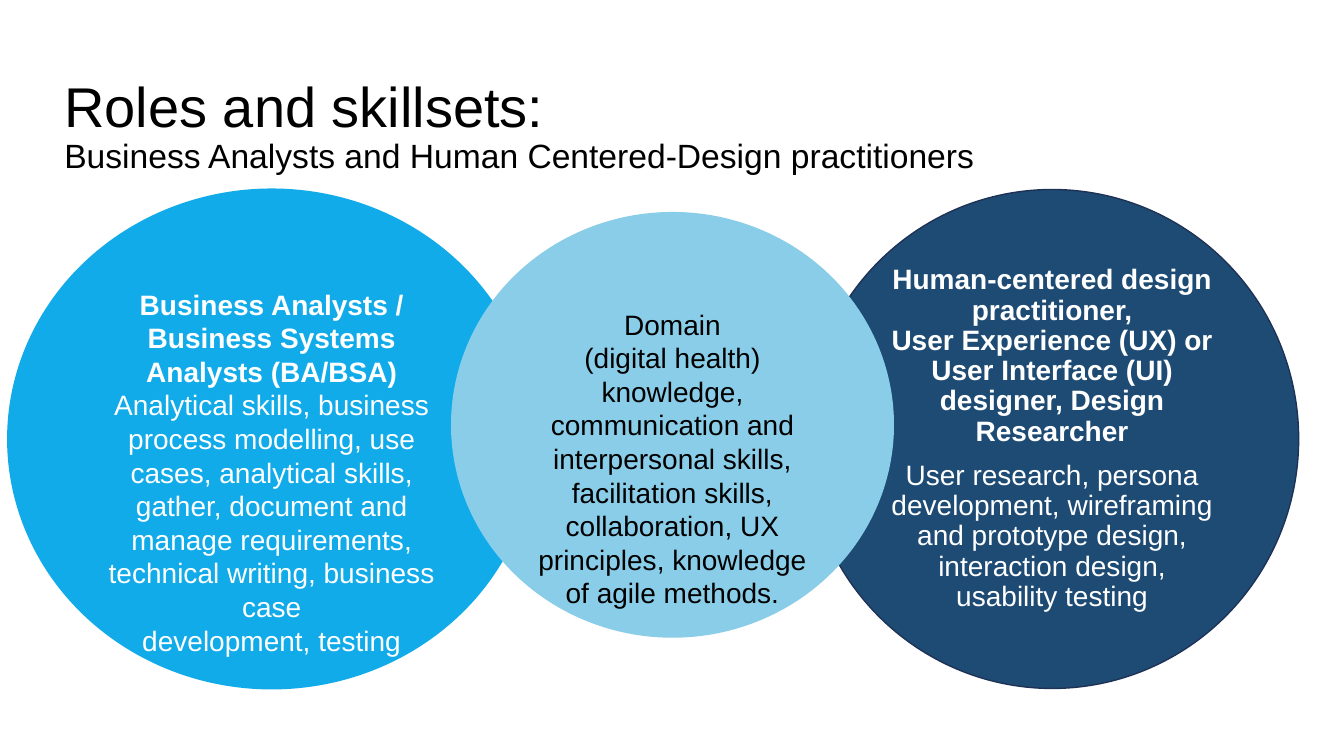
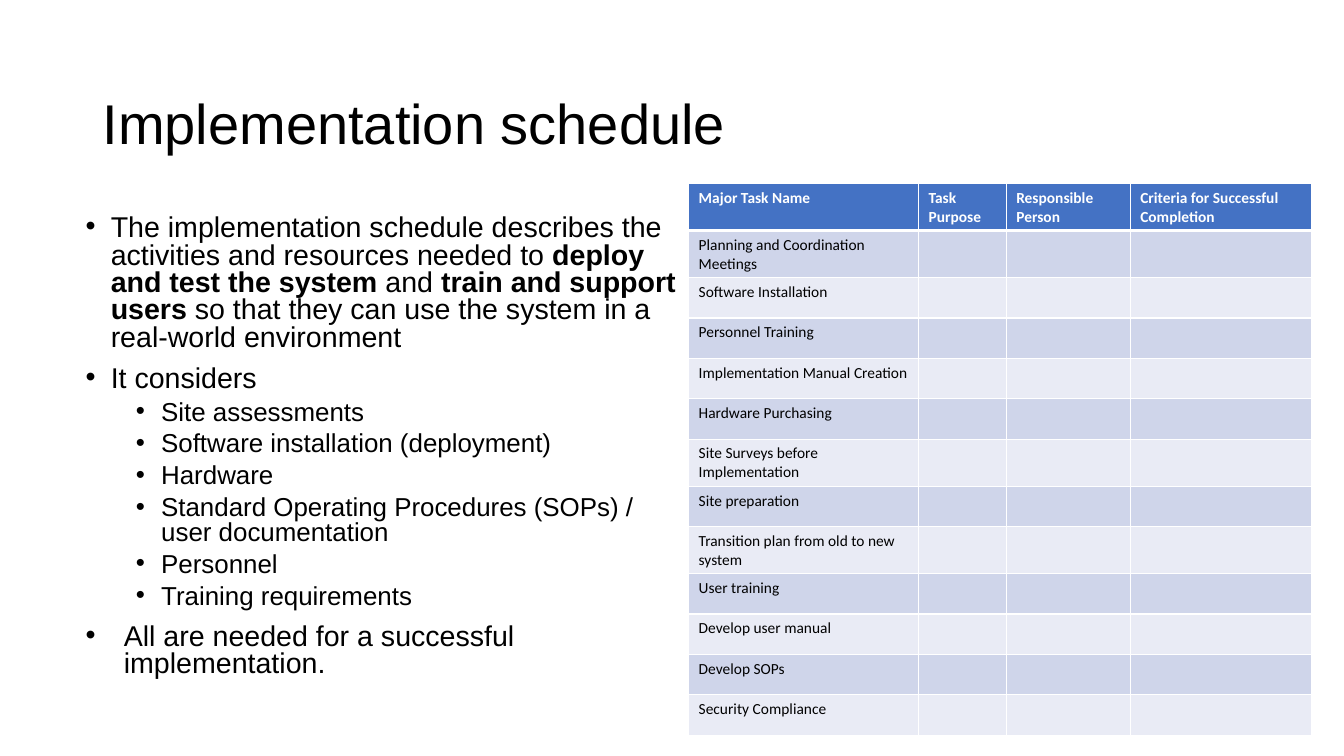
from pptx import Presentation
from pptx.dml.color import RGBColor as Rgb
from pptx.enum.shapes import MSO_SHAPE as Kind
from pptx.enum.text import MSO_ANCHOR as Anchor, PP_ALIGN as Align
from pptx.oxml import parse_xml
from pptx.oxml.ns import nsdecls
from pptx.util import Inches, Pt

COLORS = {
    "black": "000000", "white": "FFFFFF",
    "bright": "11ABE9", "navy": "1E4B74", "edge": "1E3256", "sky": "89CDE8",
    "head": "4472C4", "odd": "CFD5EA", "even": "E9EBF5",
}


def color(name):
    return Rgb.from_string(COLORS[name])


class Deck:
    """Holds the shared style and the slide being built."""

    font = "Arial"
    cell_font = "Calibri"

    def __init__(self):
        self.prs = Presentation()
        self.prs.slide_width, self.prs.slide_height = Inches(13.33), Inches(7.5)
        self.slide = None

    def page(self):
        self.slide = self.prs.slides.add_slide(self.prs.slide_layouts[6])

    def runs(self, para, parts, size, ink="black", font=None):
        """Add (text, bold) parts; a newline becomes a line break."""
        for text, bold in parts:
            for i, line in enumerate(text.split("\n")):
                if i:
                    para.add_line_break()
                run = para.add_run()
                run.text = line
                run.font.name = font or self.font
                run.font.size = Pt(size)
                run.font.bold = bold
                run.font.color.rgb = color(ink)

    def box(self, left, top, width, height, anchor=Anchor.TOP):
        area = map(Inches, (left, top, width, height))
        frame = self.slide.shapes.add_textbox(*area).text_frame
        frame.word_wrap = True
        frame.vertical_anchor = anchor
        return frame

    def title(self, left, top, text, sub=None):
        para = self.box(left, top, 11.03, 1.71, Anchor.MIDDLE).paragraphs[0]
        para.line_spacing = 0.9
        self.runs(para, [(text, False)], 40)
        if sub:
            para.add_line_break()
            self.runs(para, [(sub, False)], 24)

    def circle(self, area, fill, ink, paras, edge=None, inset=None, spacing=None, gap=0):
        """Draw an ellipse; an inset starts the text that far from the top."""
        shape = self.slide.shapes.add_shape(Kind.OVAL, *map(Inches, area))
        shape.shadow.inherit = False
        shape.fill.solid()
        shape.fill.fore_color.rgb = color(fill)
        if edge:
            shape.line.color.rgb = color(edge)
            shape.line.width = Pt(1)
        else:
            shape.line.fill.background()
        frame = shape.text_frame
        frame.word_wrap = True
        frame.vertical_anchor = Anchor.MIDDLE
        if inset:
            frame.vertical_anchor = Anchor.TOP
            frame.margin_top, frame.margin_bottom = Inches(inset), 0
        for i, part in enumerate(paras):
            para = frame.add_paragraph() if i else frame.paragraphs[0]
            para.alignment = Align.CENTER
            para.line_spacing = spacing
            if i:
                para.space_before = Pt(gap)
            self.runs(para, [part], 20, ink)

    def bullets(self, area, items):
        """Add a list of (level, hanging indent, parts)."""
        frame = self.box(*area)
        for i, (level, hang, parts) in enumerate(items):
            para = frame.add_paragraph() if i else frame.paragraphs[0]
            para.level = level
            props = para._p.get_or_add_pPr()
            props.set("marL", str(Inches(hang + level * 0.5)))
            props.set("indent", str(-Inches(hang)))
            props.append(parse_xml(f'<a:buFont {nsdecls("a")} typeface="Arial"/>'))
            props.append(parse_xml(f'<a:buChar {nsdecls("a")} char="•"/>'))
            para.line_spacing = 0.8
            if i:
                para.space_before = Pt(5 if level else 10)
            self.runs(para, parts, 18.5 if level else 20.4)

    def cell(self, cell, text, fill, head):
        props = cell._tc.get_or_add_tcPr()
        for side in "LRTB":
            width = Pt(3 if head and side == "B" else 1)
            props.append(parse_xml(
                f'<a:ln{side} {nsdecls("a")} w="{width}"><a:solidFill>'
                f'<a:srgbClr val="{COLORS["white"]}"/></a:solidFill></a:ln{side}>'))
        cell.fill.solid()
        cell.fill.fore_color.rgb = color(fill)
        ink = "white" if head else "black"
        self.runs(cell.text_frame.paragraphs[0], [(text, head)], 11, ink, self.cell_font)

    def table(self, left, top, cols, heads, tasks, tall):
        """Add a banded table; tall holds the numbers of the higher rows."""
        rows = [heads] + [[task] + [""] * (len(cols) - 1) for task in tasks]
        highs = [0.44 if r in tall else 0.35 for r in range(len(rows))]
        area = map(Inches, (left, top, sum(cols), sum(highs)))
        grid = self.slide.shapes.add_table(len(rows), len(cols), *area).table
        for col, width in zip(grid.columns, cols):
            col.width = Inches(width)
        for r, texts in enumerate(rows):
            grid.rows[r].height = Inches(highs[r])
            fill = "head" if r == 0 else "odd" if r % 2 else "even"
            for c, text in enumerate(texts):
                self.cell(grid.cell(r, c), text, fill, r == 0)


def roles(deck):
    deck.page()
    deck.title(0.54, 0.41, "Roles and skillsets:",
               "Business Analysts and Human Centered-Design practitioners")
    # Outer circles first, the shared middle on top
    deck.circle((0.07, 1.87, 5.25, 4.97), "bright", "white", [
        ("Business Analysts /", True),
        ("Business Systems Analysts (BA/BSA)", True),
        ("Analytical skills, business process modelling, use cases, analytical "
         "skills, gather, document and manage requirements, technical writing, "
         "business case\ndevelopment, testing", False),
    ], inset=0.25)
    deck.circle((7.99, 1.88, 4.89, 4.95), "navy", "white", [
        ("Human-centered design practitioner,\nUser Experience (UX) or "
         "User Interface (UI) designer, Design Researcher", True),
        ("User research, persona development, wireframing and prototype design, "
         "interaction design, usability testing", False),
    ], edge="edge", spacing=0.9, gap=10)
    deck.circle((4.48, 2.11, 4.38, 4.21), "sky", "black", [
        ("Domain\n(digital health) knowledge, communication and interpersonal "
         "skills, facilitation skills, collaboration, UX principles, knowledge "
         "of agile methods.", False),
    ], edge="sky", inset=0.32)


def schedule(deck):
    deck.page()
    deck.title(0.92, 0.4, "Implementation schedule")
    # Points on the left
    topics = ["Site assessments", "Software installation (deployment)", "Hardware",
              "Standard Operating Procedures (SOPs) / user documentation",
              "Personnel", "Training requirements"]
    deck.bullets((0.75, 2.09, 6.08, 4.75), [
        (0, 0.25, [
            ("The implementation schedule describes the activities and "
             "resources needed to ", False),
            ("deploy and test the system", True), (" and ", False),
            ("train and support users", True),
            (" so that they can use the system in a real-world environment", False)]),
        (0, 0.25, [("It considers", False)]),
        *[(1, 0.25, [(topic, False)]) for topic in topics],
        (0, 0.38, [("All are needed for a successful implementation.", False)]),
    ])
    # Task table on the right
    deck.table(
        6.83, 1.82, [2.28, 0.87, 1.23, 1.8],
        ["Major Task Name", "Task Purpose", "Responsible Person",
         "Criteria for Successful Completion"],
        ["Planning and Coordination Meetings", "Software Installation",
         "Personnel Training", "Implementation Manual Creation",
         "Hardware Purchasing", "Site Surveys before Implementation",
         "Site preparation", "Transition plan from old to new system",
         "User training", "Develop user manual", "Develop SOPs",
         "Security Compliance"],
        tall=(0, 8))


def main():
    deck = Deck()
    roles(deck)
    schedule(deck)
    deck.prs.save("out.pptx")


if __name__ == "__main__":
    main()
